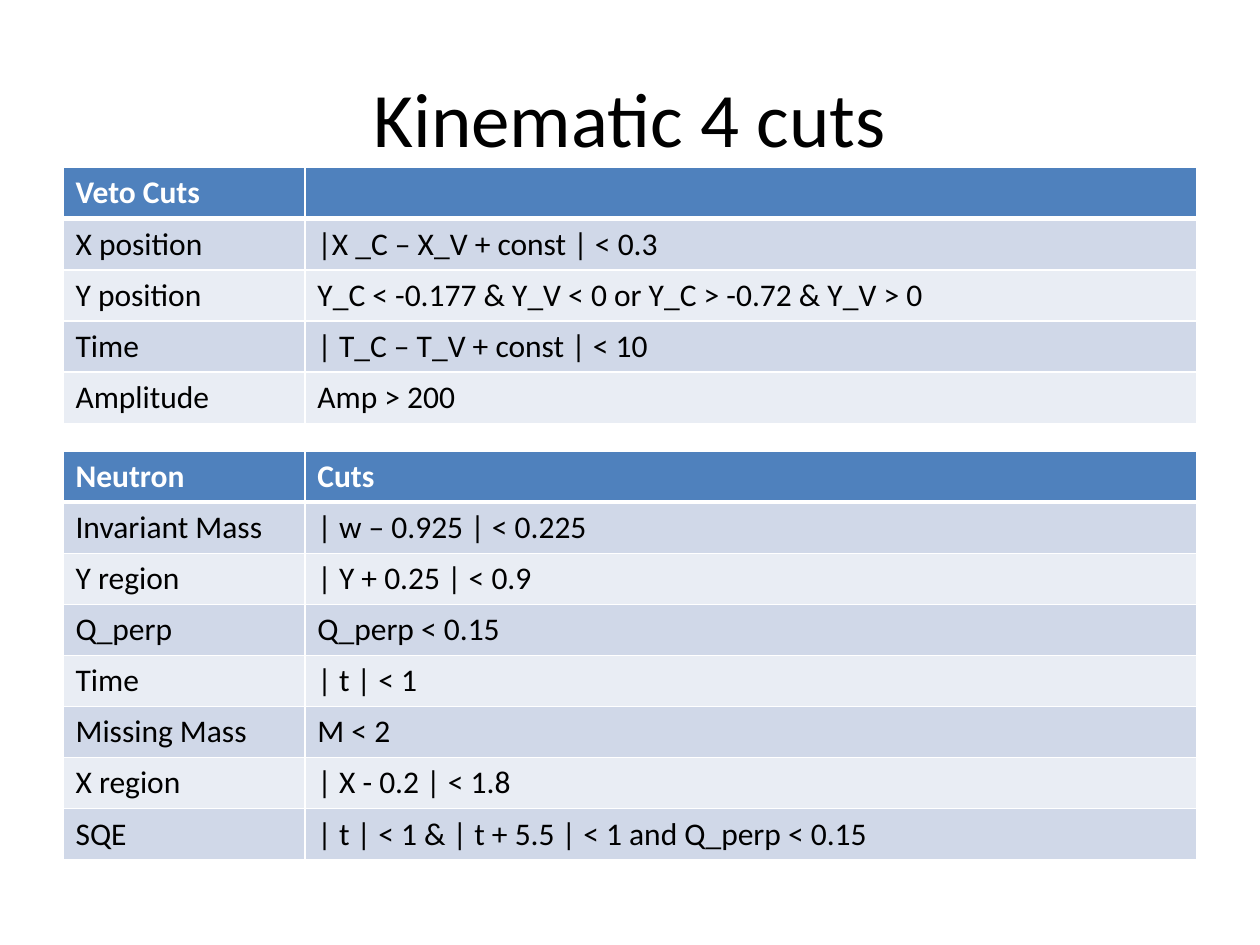
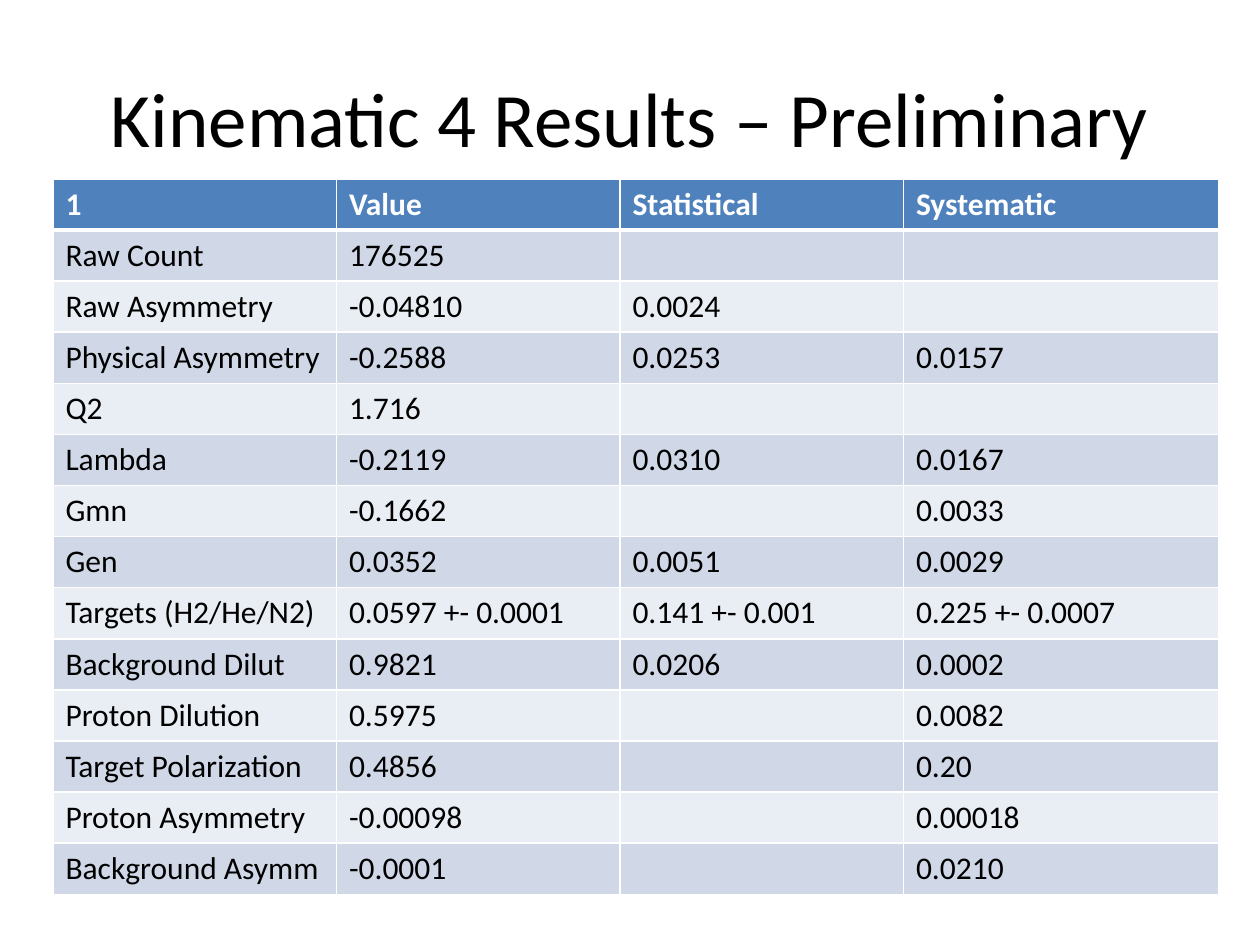
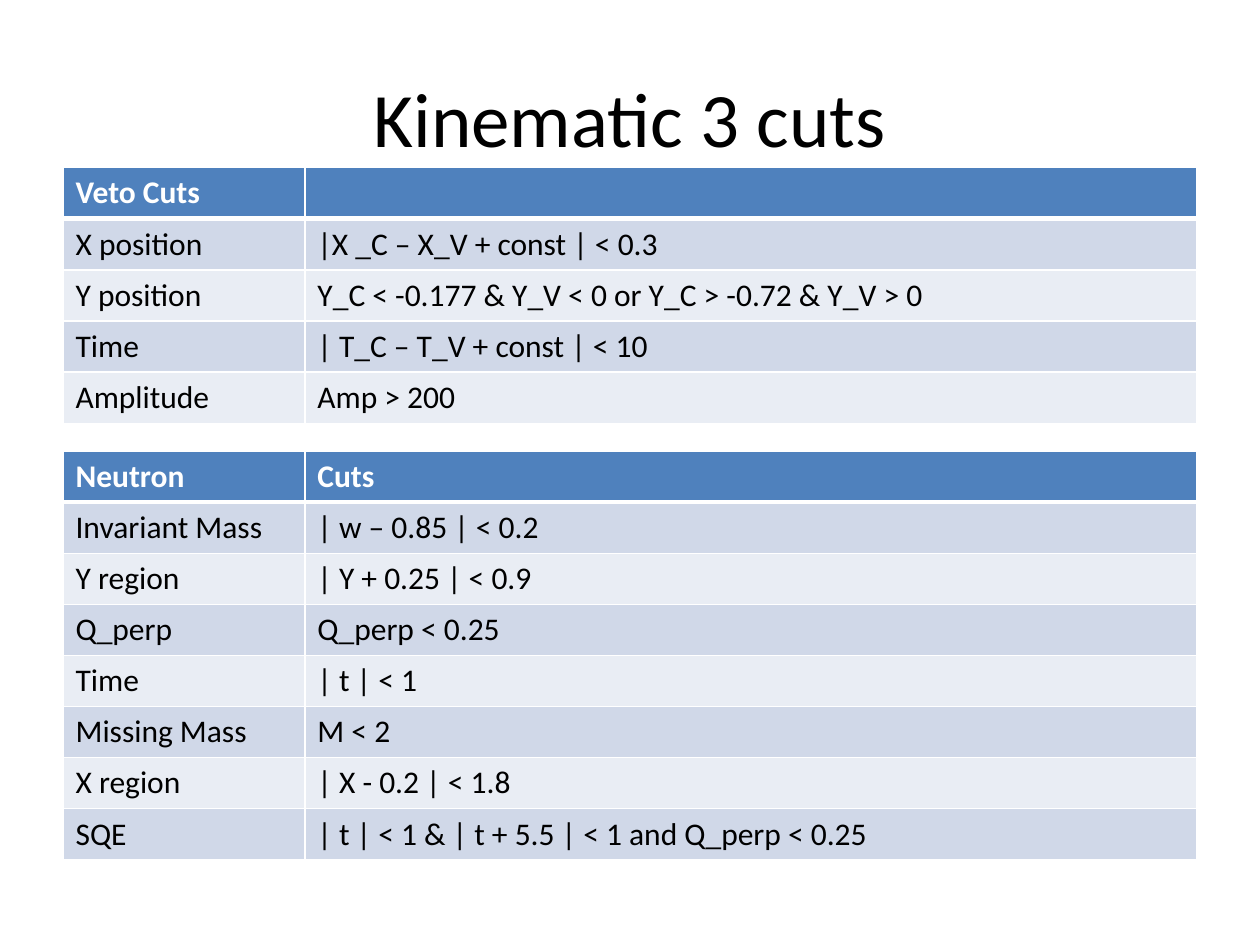
from dataclasses import dataclass

from pptx import Presentation
from pptx import util as u
from pptx.dml.color import RGBColor
from pptx.enum import text
from pptx.oxml import parse_xml
from pptx.oxml.ns import nsdecls


@dataclass(frozen=True)
class Theme:
    font: str = "Calibri"
    title_size: int = 44
    cell_size: int = 18
    ink: str = "000000"
    paper: str = "FFFFFF"
    header: str = "4F81BD"
    bands: tuple = ("D0D8E8", "E9EDF4")
    rule: float = 1
    header_rule: float = 3


THEME = Theme()
TITLE_ONLY = 5
CUT_COLUMNS = (1.92, 7.08)

VETO_ROWS = [
    ("Veto Cuts", ""),
    ("X position", "|X _C – X_V + const | < 0.3"),
    ("Y position", "Y_C < -0.177 & Y_V < 0 or Y_C > -0.72 & Y_V > 0"),
    ("Time", "| T_C – T_V + const | < 10"),
    ("Amplitude", "Amp > 200"),
]

RESULT_ROWS = [
    ("1", "Value", "Statistical", "Systematic"),
    ("Raw Count", "176525", "", ""),
    ("Raw Asymmetry", "-0.04810", "0.0024", ""),
    ("Physical Asymmetry", "-0.2588", "0.0253", "0.0157"),
    ("Q2", "1.716", "", ""),
    ("Lambda", "-0.2119", "0.0310", "0.0167"),
    ("Gmn", "-0.1662", "", "0.0033"),
    ("Gen", "0.0352", "0.0051", "0.0029"),
    ("Targets (H2/He/N2)", "0.0597 +- 0.0001", "0.141 +- 0.001", "0.225 +- 0.0007"),
    ("Background Dilut", "0.9821", "0.0206", "0.0002"),
    ("Proton Dilution", "0.5975", "", "0.0082"),
    ("Target Polarization", "0.4856", "", "0.20"),
    ("Proton Asymmetry", "-0.00098", "", "0.00018"),
    ("Background Asymm", "-0.0001", "", "0.0210"),
]


def neutron_rows(mass_cut, q_perp_cut):
    return [
        ("Neutron", "Cuts"),
        ("Invariant Mass", mass_cut),
        ("Y region", "| Y + 0.25 | < 0.9"),
        ("Q_perp", q_perp_cut),
        ("Time", "| t | < 1"),
        ("Missing Mass", "M < 2"),
        ("X region", "| X - 0.2 | < 1.8"),
        ("SQE", f"| t | < 1 & | t + 5.5 | < 1 and {q_perp_cut}"),
    ]


def style_font(font, size, color, bold=False):
    font.name = THEME.font
    font.size = u.Pt(size)
    font.bold = bold
    font.color.rgb = RGBColor.from_string(color)


def add_titled_slide(deck, title):
    page = deck.slides.add_slide(deck.slide_layouts[TITLE_ONLY])
    box = page.shapes.title
    box.left, box.top = u.Inches(0.5), u.Inches(0.3)
    box.width, box.height = u.Inches(9), u.Inches(1.25)
    box.text_frame.text = title
    box.text_frame.vertical_anchor = text.MSO_ANCHOR.MIDDLE
    para = box.text_frame.paragraphs[0]
    para.alignment = text.PP_ALIGN.CENTER
    style_font(para.font, THEME.title_size, THEME.ink)
    return page


def set_borders(cell, top, bottom):
    """Rule all four sides; the schema wants left, right, top, bottom."""
    properties = cell._tc.get_or_add_tcPr()
    widths = {"L": THEME.rule, "R": THEME.rule, "T": top, "B": bottom}
    for side, width in widths.items():
        properties.append(parse_xml(
            f'<a:ln{side} {nsdecls("a")} w="{u.Pt(width)}"><a:solidFill>'
            f'<a:srgbClr val="{THEME.paper}"/></a:solidFill></a:ln{side}>'))


def style_cell(cell, row):
    is_header = row == 0
    set_borders(cell,
                top=THEME.header_rule if row == 1 else THEME.rule,
                bottom=THEME.header_rule if is_header else THEME.rule)
    fill = THEME.header if is_header else THEME.bands[(row - 1) % 2]
    cell.fill.solid()
    cell.fill.fore_color.rgb = RGBColor.from_string(fill)
    style_font(cell.text_frame.paragraphs[0].font, THEME.cell_size,
               THEME.paper if is_header else THEME.ink, bold=is_header)


def add_banded_table(page, rows, left, top, height, columns):
    table = page.shapes.add_table(
        len(rows), len(columns), u.Inches(left), u.Inches(top),
        u.Inches(sum(columns)), u.Inches(height)).table
    for column, width in zip(table.columns, columns):
        column.width = u.Inches(width)
    for row, values in enumerate(rows):
        for column, value in enumerate(values):
            cell = table.cell(row, column)
            cell.text = value
            style_cell(cell, row)


def add_cuts_slide(deck, title, mass_cut, q_perp_cut):
    page = add_titled_slide(deck, title)
    add_banded_table(page, VETO_ROWS, 0.5, 1.33, 2.03, CUT_COLUMNS)
    add_banded_table(page, neutron_rows(mass_cut, q_perp_cut),
                     0.5, 3.58, 3.24, CUT_COLUMNS)


def add_results_slide(deck):
    page = add_titled_slide(deck, "Kinematic 4 Results – Preliminary")
    add_banded_table(page, RESULT_ROWS, 0.42, 1.42, 5.68, (2.25, 2.25, 2.25, 2.5))


def main():
    deck = Presentation()
    deck.slide_width, deck.slide_height = u.Inches(10), u.Inches(7.5)
    add_cuts_slide(deck, "Kinematic 4 cuts", "| w – 0.925 | < 0.225", "Q_perp < 0.15")
    add_results_slide(deck)
    add_cuts_slide(deck, "Kinematic 3 cuts", "| w – 0.85 | < 0.2", "Q_perp < 0.25")
    deck.save("out.pptx")


if __name__ == "__main__":
    main()
